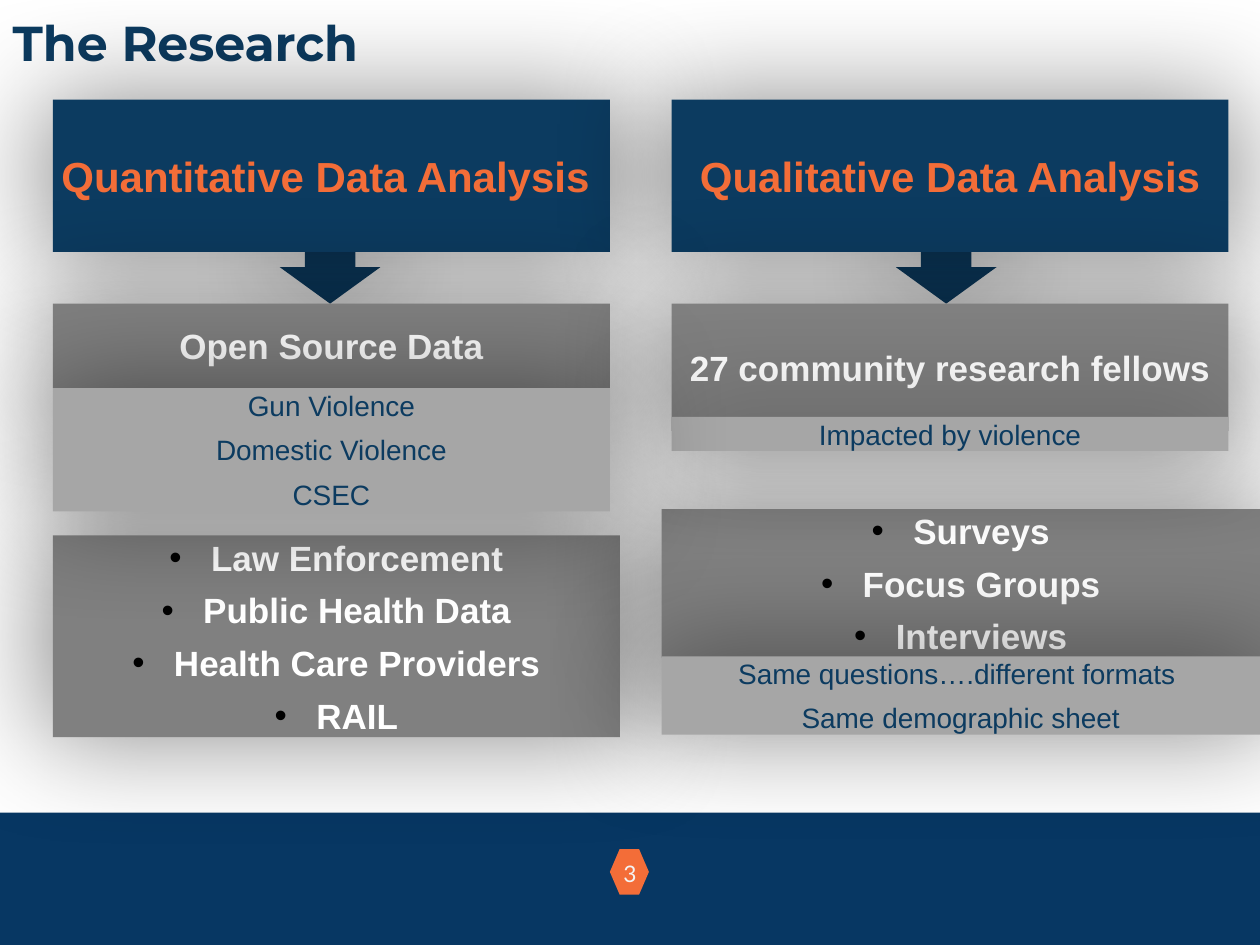
from lxml import etree
from pptx import Presentation
from pptx.dml.color import RGBColor
from pptx.enum.shapes import MSO_SHAPE
from pptx.enum.text import MSO_ANCHOR, PP_ALIGN
from pptx.oxml.ns import qn
from pptx.util import Inches, Pt

RECT, HEX, DOWN = MSO_SHAPE.RECTANGLE, MSO_SHAPE.HEXAGON, MSO_SHAPE.DOWN_ARROW
TOP, MIDDLE = MSO_ANCHOR.TOP, MSO_ANCHOR.MIDDLE
LEFT, CENTER = PP_ALIGN.LEFT, PP_ALIGN.CENTER

NAVY, ORANGE, WHITE = "0C3B60", "F36D38", "FFFFFF"
STYLES = {
    "head": dict(fill=NAVY, size=24, color=ORANGE, bold=True),
    "main": dict(fill="808080", size=20, color=WHITE, bold=True),
    "list": dict(fill="808080", size=20, color=WHITE, bold=True, after=6, bullet=True),
    "sub": dict(fill="A6A6A6", size=16, color=NAVY, after=6),
}
ARROWS = [(7.11, 1.83, 0.8, 0.58), (2.22, 1.83, 0.8, 0.58)]
BOXES = [
    ("head", (0.42, 0.79, 4.42, 1.21), ["Quantitative Data Analysis "]),
    ("head", (5.33, 0.79, 4.42, 1.21), ["Qualitative Data Analysis"]),
    ("list", (0.42, 4.25, 4.5, 1.6),
     ["Law Enforcement", "Public Health Data", "Health Care Providers", "RAIL"]),
    ("list", (5.25, 4.04, 4.75, 1.18), ["Surveys", "Focus Groups", "Interviews"]),
    ("main", (0.42, 2.41, 4.42, 0.67), ["Open Source Data"]),
    ("main", (5.33, 2.41, 4.42, 1.01), ["27 community research fellows"]),
    ("sub", (5.33, 3.31, 4.42, 0.27), ["Impacted by violence"]),
    ("sub", (5.25, 5.21, 4.75, 0.62),
     ["Same questions….different formats ", "Same demographic sheet"]),
    ("sub", (0.42, 3.08, 4.42, 0.98), ["Gun Violence", "Domestic Violence", "CSEC"]),
]


def rgb(code):
    return RGBColor.from_string(code)


def add_shape(slide, kind, place, fill):
    shape = slide.shapes.add_shape(kind, *map(Inches, place))
    shape.shadow.inherit = False
    shape.fill.solid()
    shape.fill.fore_color.rgb = rgb(fill)
    shape.line.fill.background()
    return shape


def add_glow(shape):
    effects = shape._element.spPr.find(qn("a:effectLst"))
    shadow = etree.SubElement(
        effects, qn("a:outerShdw"), blurRad=str(Pt(66)), dist="0",
        sx="104000", sy="104000", algn="ctr", rotWithShape="0")
    color = etree.SubElement(shadow, qn("a:srgbClr"), val="000000")
    etree.SubElement(color, qn("a:alpha"), val="43000")


def add_bullet(para):
    props = para._p.get_or_add_pPr()
    props.set("marL", str(Inches(0.33)))
    props.set("indent", str(-Inches(0.33)))
    color = etree.SubElement(props, qn("a:buClr"))
    etree.SubElement(color, qn("a:srgbClr"), val="000000")
    etree.SubElement(props, qn("a:buFont"), typeface="Arial")
    etree.SubElement(props, qn("a:buChar"), char="•")


def set_text(shape, lines, size, color, font="Arial", bold=False, after=0,
             bullet=False, align=CENTER, anchor=MIDDLE, inset=0):
    frame = shape.text_frame
    frame.text = "\n".join(lines)
    frame.word_wrap = True
    frame.vertical_anchor = anchor
    frame.margin_left = frame.margin_right = Inches(inset)
    frame.margin_top = frame.margin_bottom = Inches(inset)
    for para in frame.paragraphs:
        para.alignment = align
        para.space_after = Pt(after)
        if bullet:
            add_bullet(para)
        for run in para.runs:
            run.font.name = font
            run.font.size = Pt(size)
            run.font.bold = bold
            run.font.color.rgb = rgb(color)


def main():
    deck = Presentation()
    deck.slide_width, deck.slide_height = Inches(10), Inches(7.5)
    slide = deck.slides.add_slide(deck.slide_layouts[5])

    title = slide.shapes.title
    title.left, title.top, title.width, title.height = map(Inches, (0, 0, 10, 0.83))
    set_text(title, ["The Research"], 28, NAVY, "Montserrat", True,
             align=LEFT, anchor=TOP, inset=0.1)

    add_shape(slide, RECT, (-0.06, 6.45, 10.11, 1.12), "073763")
    add_shape(slide, HEX, (4.84, 6.74, 0.31, 0.36), ORANGE)
    number = slide.shapes.add_textbox(*map(Inches, (4.7, 6.72, 0.6, 0.6)))
    set_text(number, ["3"], 13, "F3F3F3", "Lato", anchor=TOP, inset=0.1)

    for place in ARROWS:
        add_glow(add_shape(slide, DOWN, place, NAVY))
    for name, place, lines in BOXES:
        style = dict(STYLES[name])
        box = add_shape(slide, RECT, place, style.pop("fill"))
        add_glow(box)
        set_text(box, lines, **style)

    deck.save("out.pptx")


if __name__ == "__main__":
    main()
